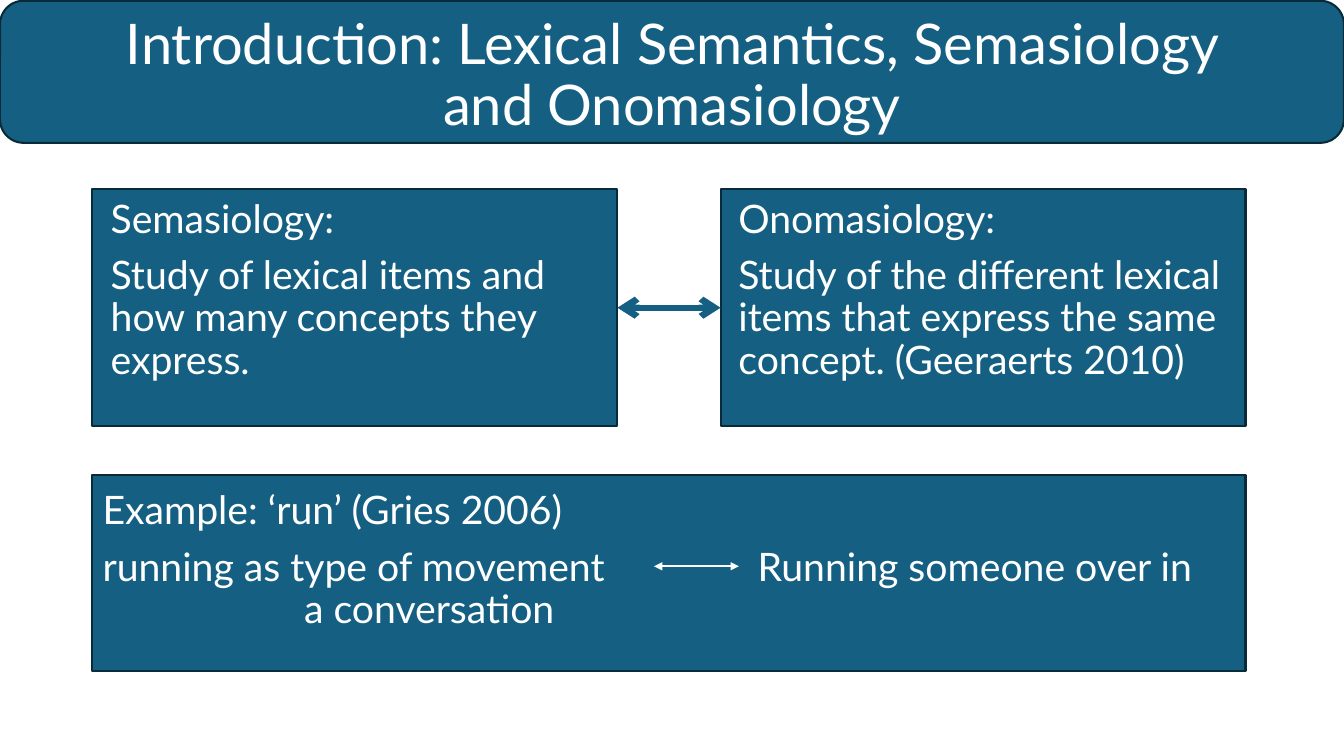
from dataclasses import dataclass

from lxml import etree
from pptx import Presentation
from pptx.dml.color import RGBColor
from pptx.enum import shapes, text
from pptx.oxml import ns
from pptx.util import Cm, Pt

FONT = "Lato"
BLUE, NAVY, WHITE = "156082", "092A39", "FFFFFF"
LEFT, TOP = 2.33, 4.77
BOX_W, BOX_H = 13.23, 5.97
FULL_W = 29.06
RIGHT = LEFT + FULL_W - BOX_W


@dataclass
class Area:
    """A rectangle on the slide, in centimetres."""
    x: float
    y: float
    w: float
    h: float

    def lengths(self) -> tuple:
        return Cm(self.x), Cm(self.y), Cm(self.w), Cm(self.h)


@dataclass
class Definition:
    box: Area
    text_area: Area
    lines: list[str]


DEFINITIONS = [
    Definition(Area(LEFT, TOP, BOX_W, BOX_H), Area(2.54, 4.9, 12.8, 5.74),
               ["Semasiology:",
                "Study of lexical items and how many concepts they express."]),
    Definition(Area(RIGHT, TOP, BOX_W, BOX_H), Area(18.36, 4.9, BOX_W, 12.09),
               ["Onomasiology:",
                "Study of the different lexical items that express the same "
                "concept. (Geeraerts 2010)"]),
]
# Default tab stops, one inch apart, carry both lines to the second column.
EXAMPLE = ["Example: ‘run’ (Gries 2006)",
           "running as type of movement \t\t\tRunning someone "
           "over in \t\t\t\t\t\t\ta conversation"]


def color(value: str) -> RGBColor:
    return RGBColor.from_string(value)


def add_panel(s, kind, area: Area):
    sp = s.shapes.add_shape(kind, *area.lengths())
    sp.shadow.inherit = False
    sp.fill.solid()
    sp.fill.fore_color.rgb = color(BLUE)
    sp.line.color.rgb = color(NAVY)
    sp.line.width = Pt(1.5)
    return sp


def fill_text(sp, lines: list[str], size: float, before: float, align, anchor) -> None:
    tf = sp.text_frame
    tf.word_wrap = True
    tf.auto_size = text.MSO_AUTO_SIZE.NONE
    tf.vertical_anchor = anchor
    tf.text = "\n".join(lines)
    for p in tf.paragraphs:
        p.alignment = align
        p.line_spacing = 0.9
        p.space_before = Pt(before)
        for r in p.runs:
            r.font.name = FONT
            r.font.size = Pt(size)
            r.font.color.rgb = color(WHITE)


def fill_body(sp, lines: list[str]) -> None:
    fill_text(sp, lines, 28, 10, text.PP_ALIGN.LEFT, text.MSO_ANCHOR.TOP)


def drop_bullets(sp) -> None:
    for p in sp.text_frame.paragraphs:
        pPr = p._p.get_or_add_pPr()
        pPr.set("marL", "0")
        pPr.set("indent", "0")
        etree.SubElement(pPr, ns.qn("a:buNone"))


def place(sp, area: Area) -> None:
    """Move a placeholder to its area, in front of the panels."""
    sp.left, sp.top, sp.width, sp.height = area.lengths()
    sp.element.getparent().append(sp.element)


def add_double_arrow(s, x1: float, x2: float, y: float, line: str, width: float, head: str):
    cx = s.shapes.add_connector(shapes.MSO_CONNECTOR.STRAIGHT, Cm(x1), Cm(y), Cm(x2), Cm(y))
    cx.line.color.rgb = color(line)
    cx.line.width = Pt(width)
    ln = cx.line._get_or_add_ln()
    for end in ("a:headEnd", "a:tailEnd"):
        etree.SubElement(ln, ns.qn(end), type=head)
    etree.SubElement(cx._element.spPr, ns.qn("a:effectLst"))
    return cx


def main() -> None:
    prs = Presentation()
    prs.slide_width, prs.slide_height = Cm(33.87), Cm(19.05)
    s = prs.slides.add_slide(prs.slide_layouts[1])
    title, body = s.shapes.title, s.placeholders[1]

    rect = shapes.MSO_SHAPE.RECTANGLE
    add_panel(s, rect, Area(LEFT, 11.97, FULL_W, 4.93))
    semasiology, onomasiology = [add_panel(s, rect, d.box) for d in DEFINITIONS]
    add_panel(s, shapes.MSO_SHAPE.ROUNDED_RECTANGLE, Area(0, 0.02, 33.87, 3.58))

    place(title, Area(LEFT, 0.1, 29.21, 3.68))
    fill_text(title, ["Introduction: Lexical Semantics, Semasiology and Onomasiology"],
              40, 0, text.PP_ALIGN.CENTER, text.MSO_ANCHOR.MIDDLE)
    place(body, Area(LEFT, 12.24, FULL_W, 4.57))
    fill_body(body, EXAMPLE)
    drop_bullets(body)
    for d in DEFINITIONS:
        fill_body(s.shapes.add_textbox(*d.text_area.lengths()), d.lines)

    link = add_double_arrow(s, LEFT + BOX_W, RIGHT, TOP + BOX_H / 2, BLUE, 4.5, "arrow")
    link.begin_connect(semasiology, 3)
    link.end_connect(onomasiology, 1)
    add_double_arrow(s, 16.48, 18.62, 14.27, WHITE, 1.5, "triangle")

    prs.save("out.pptx")


if __name__ == "__main__":
    main()
